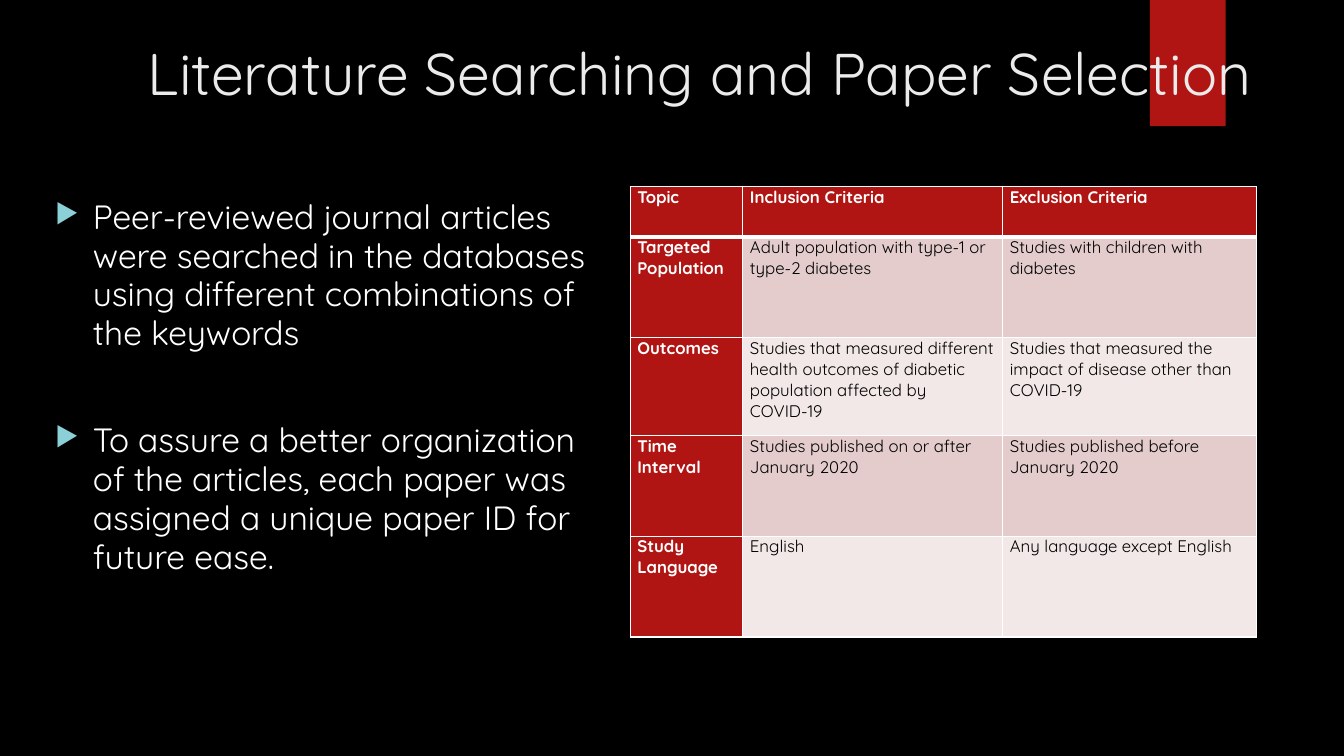
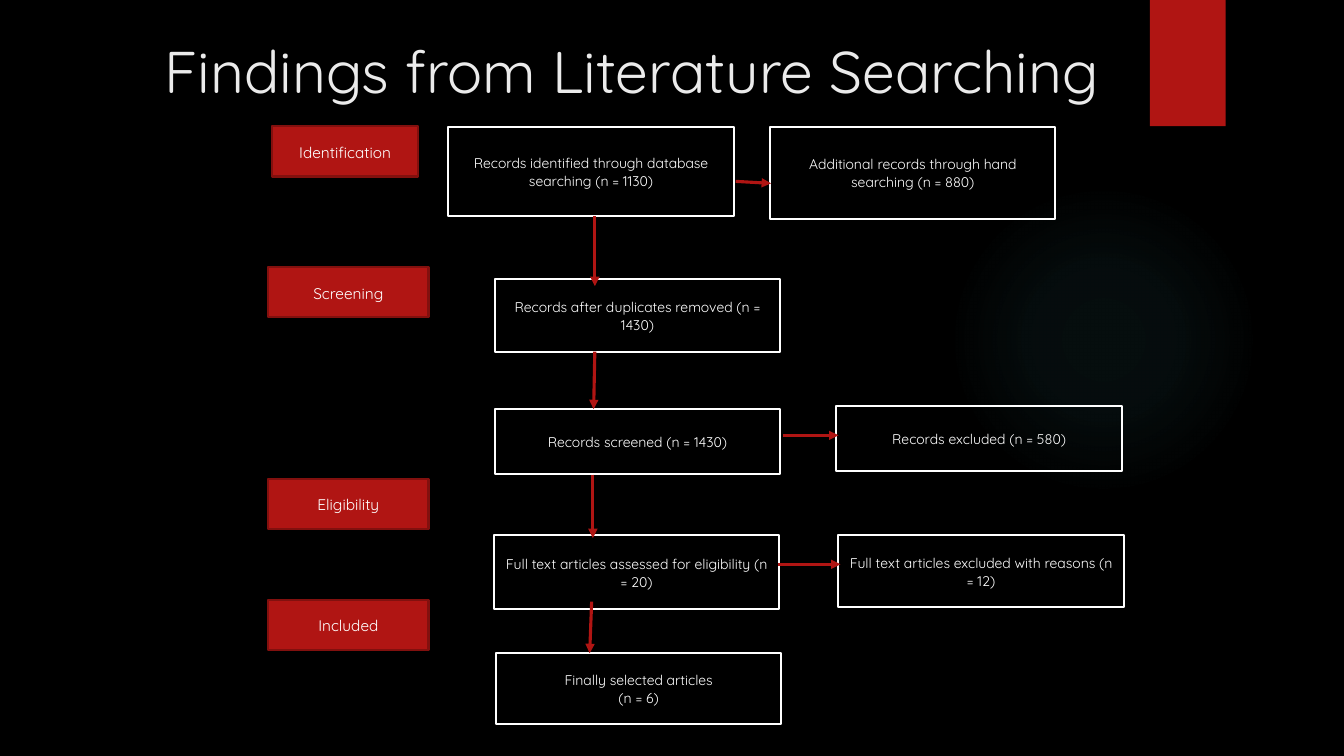
from lxml import etree
from pptx import Presentation
from pptx.dml.color import RGBColor
from pptx.enum.shapes import MSO_CONNECTOR as Connector, MSO_SHAPE as Shape
from pptx.enum.text import MSO_ANCHOR as Anchor, PP_ALIGN as Align
from pptx.oxml import parse_xml
from pptx.oxml.ns import nsdecls, qn
from pptx.util import Cm, Pt

COLOURS = {
    "background": "000000", "accent": "B01513", "accent_edge": "82100E",
    "title": "EBEBEB", "light": "FFFFFF", "dark": "000000",
    "bullet": "8AD0D6", "glow": "50B9C1",
    "stripe_odd": "E4CCCC", "stripe_even": "F2E8E7",
}
FONT = "Quicksand"

SEARCH_POINTS = [
    "Peer-reviewed journal articles were searched in the databases using "
    "different combinations of the keywords",
    "To assure a better organization of the articles, each paper was assigned "
    "a unique paper ID for future ease.",
]
CRITERIA = [
    ("Topic", "Inclusion Criteria", "Exclusion Criteria"),
    ("Targeted Population", "Adult population with type-1 or type-2 diabetes",
     "Studies with children with diabetes"),
    ("Outcomes", "Studies that measured different health outcomes of diabetic "
     "population affected by COVID-19",
     "Studies that measured the impact of disease other than COVID-19"),
    ("Time Interval", "Studies published on or after January 2020",
     "Studies published before January 2020"),
    ("Study Language", "English", "Any language except English"),
]
CRITERIA_WIDTHS = (2.84, 6.55, 6.4)
CRITERIA_HEIGHTS = (1.27, 2.54, 2.46, 2.54, 2.54)

STAGE_HEIGHT = 1.27
STAGES = [  # left, top, width, label
    (6.86, 3.18, 3.68, "Identification"),
    (6.76, 6.73, 4.04, "Screening"),
    (6.76, 12.07, 4.04, "Eligibility"),
    (6.76, 15.11, 4.04, "Included"),
]
RECORD_WIDTH = 7.19
RECORDS = [  # left, top, height, label
    (11.3, 3.2, 2.24, "Records identified through database searching (n = 1130)"),
    (19.41, 3.2, 2.31, "Additional records through hand searching (n = 880)"),
    (12.47, 7.04, 1.83, "Records after duplicates removed (n = 1430)"),
    (12.47, 10.31, 1.63, "Records screened (n = 1430)"),
    (21.08, 10.24, 1.63, "Records excluded (n = 580)"),
    (12.45, 13.49, 1.85, "Full text articles assessed for eligibility (n = 20)"),
    (21.13, 13.49, 1.8, "Full text articles excluded with reasons (n = 12)"),
    (12.5, 16.46, 1.78, "Finally selected articles\v(n = 6)"),
]
FLOWS = [  # from x, from y, to x, to y
    (14.99, 5.44, 14.99, 7.21),
    (18.54, 4.57, 19.43, 4.62),
    (14.99, 8.86, 14.96, 10.31),
    (14.94, 11.96, 14.94, 13.56),
    (19.74, 10.97, 21.13, 10.97),
    (19.61, 14.22, 21.18, 14.22),
    (14.91, 15.16, 14.86, 16.46),
]


def colour(name):
    return RGBColor.from_string(COLOURS[name])


def apply(target, formats):
    for attribute, value in formats.items():
        setattr(target, attribute, value)


def lengths(*values):
    return [Cm(value) for value in values]


class Deck:
    """Holds the shared style and the slide being built."""

    def __init__(self):
        self.presentation = Presentation()
        apply(self.presentation, {"slide_width": Cm(33.87), "slide_height": Cm(19.05)})
        self.slide = None

    def new_slide(self, title, left, top, width, align=Align.LEFT):
        self.slide = self.presentation.slides.add_slide(
            self.presentation.slide_layouts[6])
        backdrop = self.slide.background.fill
        backdrop.solid()
        backdrop.fore_color.rgb = colour("background")
        self.glow()
        self.panel(28.98, 0, 1.91, 3.18, "accent")
        heading = self.text_area(left, top, width, 3.89)
        self.set_text(heading, title, 42, "title", alignment=align)

    def set_text(self, frame, text, size, ink, bold=False, **paragraph_formats):
        frame.text = text
        for paragraph in frame.paragraphs:
            self.style(paragraph, size, ink, bold, **paragraph_formats)

    def style(self, paragraph, size, ink, bold=False, **paragraph_formats):
        apply(paragraph, paragraph_formats)
        for run in paragraph.runs:
            apply(run.font, {"name": FONT, "size": Pt(size), "bold": bold})
            run.font.color.rgb = colour(ink)

    def text_area(self, left, top, width, height):
        area = self.slide.shapes.add_textbox(*lengths(left, top, width, height))
        area.text_frame.word_wrap = True
        return area.text_frame

    def panel(self, left, top, width, height, fill=None, edge=None, kind=Shape.RECTANGLE):
        panel = self.slide.shapes.add_shape(kind, *lengths(left, top, width, height))
        panel.shadow.inherit = False
        if fill:
            panel.fill.solid()
            panel.fill.fore_color.rgb = colour(fill)
        else:
            panel.fill.background()
        if edge:
            panel.line.color.rgb = colour(edge)
            panel.line.width = Pt(1.5)
        else:
            panel.line.fill.background()
        return panel

    def glow(self):
        """Adds the faint radial light behind the content."""
        properties = self.panel(23.9, 4.65, 7.82, 7.82, kind=Shape.OVAL).element.spPr
        stops = "".join(
            f'<a:gs pos="{position * 1000}"><a:srgbClr val="{COLOURS["glow"]}">'
            f'<a:alpha val="{opacity * 1000}"/></a:srgbClr></a:gs>'
            for position, opacity in ((0, 7), (36, 6), (69, 0)))
        gradient = parse_xml(
            f'<a:gradFill {nsdecls("a")}><a:gsLst>{stops}</a:gsLst><a:path path="circle">'
            '<a:fillToRect l="50000" t="50000" r="50000" b="50000"/></a:path></a:gradFill>')
        properties.replace(properties.find(qn("a:noFill")), gradient)

    def label(self, left, top, width, height, text, size, **look):
        frame = self.panel(left, top, width, height, **look).text_frame
        apply(frame, {"word_wrap": True, "vertical_anchor": Anchor.MIDDLE})
        self.set_text(frame, text, size, "light",
                      alignment=Align.CENTER, line_spacing=1.07)

    def bullets(self, left, top, width, height, points):
        frame = self.text_area(left, top, width, height)
        for index, point in enumerate(points):
            paragraph = frame.add_paragraph() if index else frame.paragraphs[0]
            properties = paragraph._p.get_or_add_pPr()
            properties.set("marL", str(Cm(0.95)))
            properties.set("indent", str(-Cm(0.95)))
            tint = etree.SubElement(properties, qn("a:buClr"))
            etree.SubElement(tint, qn("a:srgbClr"), val=COLOURS["bullet"])
            etree.SubElement(properties, qn("a:buSzPct"), val="80000")
            etree.SubElement(properties, qn("a:buChar"), char="▶")
            paragraph.add_run().text = point
            self.style(paragraph, 24, "light", line_spacing=0.96,
                       space_before=Pt(49 if index else 0))

    def borders(self, cell, bottom):
        properties = cell._tc.get_or_add_tcPr()
        for side, points in (("L", 1), ("R", 1), ("T", 1), ("B", bottom)):
            edge = etree.SubElement(properties, qn(f"a:ln{side}"), w=str(Pt(points)))
            paint = etree.SubElement(edge, qn("a:solidFill"))
            etree.SubElement(paint, qn("a:srgbClr"), val=COLOURS["light"])

    def table(self, left, top, rows, widths, heights):
        grid = self.slide.shapes.add_table(
            len(rows), len(widths),
            *lengths(left, top, sum(widths), sum(heights))).table
        for column, width in zip(grid.columns, widths):
            column.width = Cm(width)
        for row, height in zip(grid.rows, heights):
            row.height = Cm(height)
        for r, texts in enumerate(rows):
            for c, text in enumerate(texts):
                cell = grid.cell(r, c)
                heading = r == 0 or c == 0
                stripe = "stripe_odd" if r % 2 else "stripe_even"
                apply(cell, {"margin_left": Cm(0.18), "margin_right": Cm(0.18),
                             "margin_top": 0, "margin_bottom": 0})
                self.borders(cell, bottom=1 if r else 3)
                cell.fill.solid()
                cell.fill.fore_color.rgb = colour("accent" if heading else stripe)
                self.set_text(cell.text_frame, text, 12,
                              "light" if heading else "dark", heading)

    def arrow(self, *ends):
        arrow = self.slide.shapes.add_connector(Connector.STRAIGHT, *lengths(*ends))
        arrow.line.color.rgb = colour("accent")
        arrow.line.width = Pt(2.25)
        properties = arrow._element.spPr
        etree.SubElement(properties.find(qn("a:ln")), qn("a:tailEnd"), type="triangle")
        etree.SubElement(properties, qn("a:effectLst"))


def main():
    deck = Deck()

    deck.new_slide("Literature Searching and Paper Selection",
                   1.75, 0.81, 31.75, Align.CENTER)
    deck.bullets(1.14, 4.88, 14.48, 11.66, SEARCH_POINTS)
    deck.table(15.88, 4.7, CRITERIA, CRITERIA_WIDTHS, CRITERIA_HEIGHTS)

    deck.new_slide("Findings from Literature Searching", 3.89, 0.76, 26.14)
    for left, top, height, text in RECORDS:
        deck.label(left, top, RECORD_WIDTH, height, text, 10, edge="light")
    for left, top, width, text in STAGES:
        deck.label(left, top, width, STAGE_HEIGHT, text, 11,
                   fill="accent", edge="accent_edge")
    for flow in FLOWS:
        deck.arrow(*flow)

    deck.presentation.save("out.pptx")


if __name__ == "__main__":
    main()
